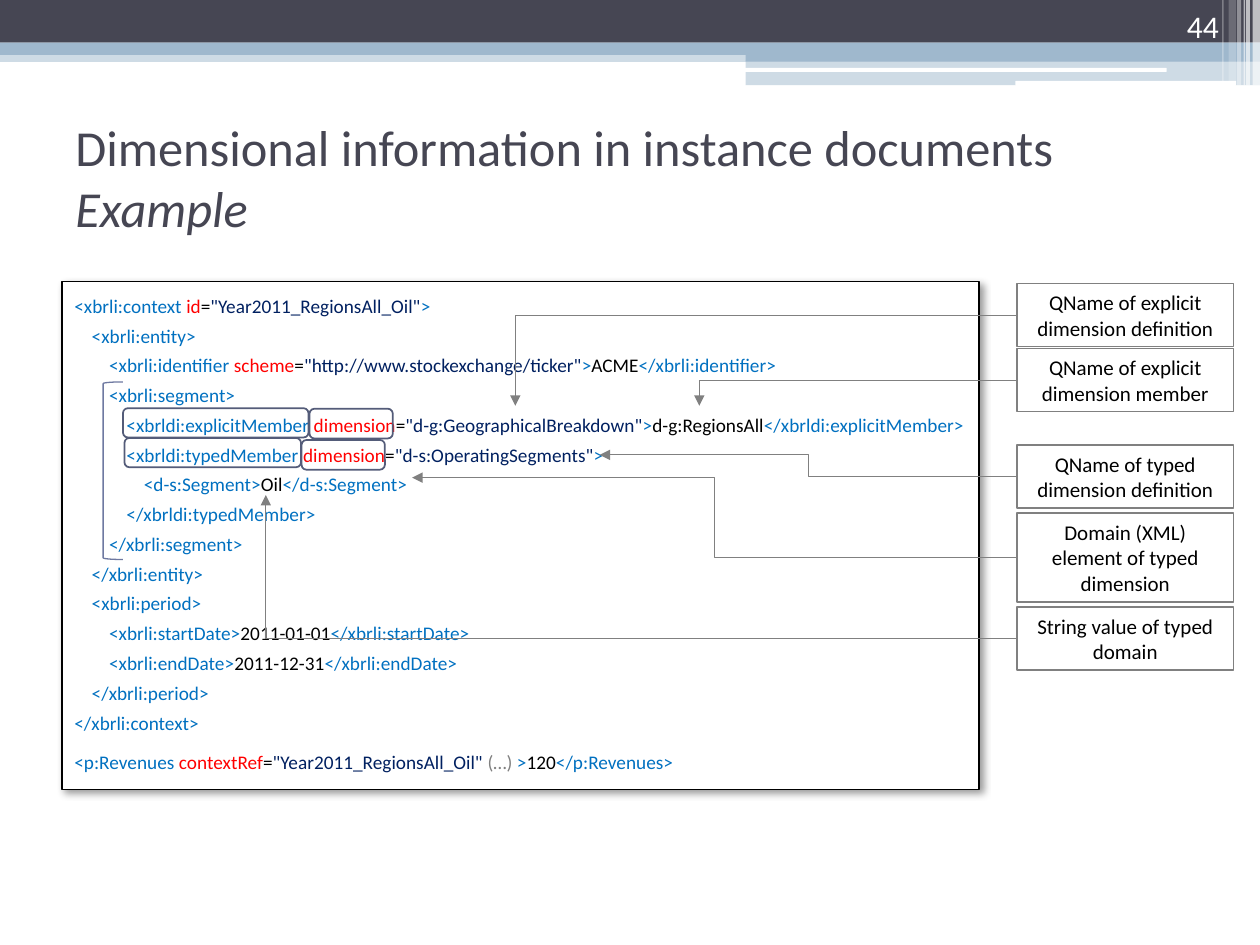
from lxml import etree
from pptx import Presentation
from pptx.dml.color import RGBColor
from pptx.enum.shapes import MSO_CONNECTOR, MSO_SHAPE
from pptx.enum.text import MSO_ANCHOR, PP_ALIGN
from pptx.oxml import parse_xml
from pptx.oxml.ns import qn
from pptx.util import Cm, Pt

RECT, ROUNDED = MSO_SHAPE.RECTANGLE, MSO_SHAPE.ROUNDED_RECTANGLE
BRACKET = MSO_SHAPE.LEFT_BRACKET
ELBOW = MSO_CONNECTOR.ELBOW
MIDDLE, TOP, BOTTOM = MSO_ANCHOR.MIDDLE, MSO_ANCHOR.TOP, MSO_ANCHOR.BOTTOM
LEFT, CENTER, RIGHT = PP_ALIGN.LEFT, PP_ALIGN.CENTER, PP_ALIGN.RIGHT
DARK, BLUE, WHITE, GREY = "464653", "9FB8CD", "FFFFFF", "808080"
TAG, ATTRIBUTE, VALUE, BLACK = "0070C0", "FF0000", "002060", "000000"
ATTRIBUTES = ("id", "scheme", "dimension", "contextRef")

deck = Presentation()
deck.slide_width, deck.slide_height = Cm(25.4), Cm(19.05)
page = deck.slides.add_slide(deck.slide_layouts[6])


def add_box(kind, place, fill=None, opacity=100, line=None, width=0.75):
    """Add a shape without shadow; place is left, top, width, height in cm."""
    box = page.shapes.add_shape(kind, *map(Cm, place))
    box.shadow.inherit = False
    if fill:
        box.fill.solid()
        box.fill.fore_color.rgb = RGBColor.from_string(fill)
        if opacity < 100:
            colour = box.fill._xPr.find(qn("a:solidFill"))[0]
            etree.SubElement(colour, qn("a:alpha")).set("val", str(opacity * 1000))
    else:
        box.fill.background()
    if line:
        box.line.color.rgb = RGBColor.from_string(line)
        box.line.width = Pt(width)
    else:
        box.line.fill.background()
    return box


def style_text(box, size, colour, align=LEFT, anchor=MIDDLE):
    frame = box.text_frame
    frame.word_wrap = True
    frame.vertical_anchor = anchor
    for para in frame.paragraphs:
        para.alignment = align
        for span in para.runs:
            span.font.name = "Calibri"
            span.font.size = Pt(size)
            span.font.color.rgb = RGBColor.from_string(colour)


# Header bands and the stripes at the right edge
for kind, place, fill, opacity in [
    (RECT, (0, 1.02, 25.4, 0.23), BLUE, 50),
    (RECT, (0, 0, 25.4, 0.86), DARK, 100),
    (RECT, (0, 0.86, 25.4, 0.25), BLUE, 100),
    (RECT, (15.03, 0.99, 10.37, 0.25), BLUE, 100),
    (RECT, (15.03, 1.22, 10.37, 0.5), BLUE, 50),
    (ROUNDED, (15.01, 1.37, 8.51, 0.08), WHITE, 100),
    (ROUNDED, (20.47, 1.63, 4.45, 0.1), WHITE, 100),
]:
    add_box(kind, place, fill, opacity)
for left, width, height, opacity in [
    (25.25, 0.15, 1.73, 65), (25.12, 0.08, 1.73, 65), (25.07, 0.03, 1.73, 60),
    (24.94, 0.08, 1.73, 40), (24.77, 0.15, 1.63, 20), (24.64, 0.03, 1.63, 30),
]:
    add_box(RECT, (left, 0, width, height), WHITE, opacity)

# Instance document: indent level, then pieces split by "|"
code_lines = [
    (0, '<xbrli:context |id|=|"Year2011_RegionsAll_Oil"|>'),
    (1, '<xbrli:entity>'),
    (2, '<xbrli:identifier |scheme|=|"http://www.stockexchange/ticker"|>|ACME|</xbrli:identifier>'),
    (2, '<xbrli:segment>'),
    (3, '<xbrldi:explicitMember |dimension|=|"d-g:GeographicalBreakdown"|>|d-g:RegionsAll|</xbrldi:explicitMember>'),
    (3, '<xbrldi:typedMember |dimension|=|"d-s:OperatingSegments"|>'),
    (4, '<d-s:Segment>|Oil|</d-s:Segment>'),
    (3, '</xbrldi:typedMember>'),
    (2, '</xbrli:segment>'),
    (1, '</xbrli:entity>'),
    (1, '<xbrli:period>'),
    (2, '<xbrli:startDate>|2011-01-01|</xbrli:startDate>'),
    (2, '<xbrli:endDate>|2011-12-31|</xbrli:endDate>'),
    (1, '</xbrli:period>'),
    (0, '</xbrli:context>'),
    (0, '<p:Revenues |contextRef|=|"Year2011_RegionsAll_Oil" |(…) |>|120|</p:Revenues>'),
]
code = add_box(RECT, (1.25, 5.67, 18.49, 10.25), WHITE, line=BLACK)
code.shadow.inherit = True
code._element.spPr.append(parse_xml(
    '<a:effectLst xmlns:a="http://schemas.openxmlformats.org/drawingml/2006/main">'
    '<a:outerShdw blurRad="50800" dist="38100" dir="2700000" algn="tl" rotWithShape="0">'
    '<a:srgbClr val="000000"><a:alpha val="40000"/></a:srgbClr>'
    '</a:outerShdw></a:effectLst>'))
for number, (level, line) in enumerate(code_lines):
    para = code.text_frame.paragraphs[0] if number == 0 else code.text_frame.add_paragraph()
    para.line_spacing = Pt(17)
    para._p.get_or_add_pPr().set("marL", str(Cm(0.35 * level)))
    for piece in line.split("|"):
        para.add_run().text = piece
para.line_spacing = 1.5
para.space_before = Pt(3)
style_text(code, 11, BLACK, anchor=TOP)
for para in code.text_frame.paragraphs:
    for span in para.runs:
        if span.text[0] in "<>":
            colour = TAG
        elif span.text in ATTRIBUTES:
            colour = ATTRIBUTE
        elif span.text[0] == '"':
            colour = VALUE
        else:
            colour = GREY if span.text[0] == "(" else BLACK
        span.font.color.rgb = RGBColor.from_string(colour)

# Page number and title
number_box = page.shapes.add_textbox(Cm(22.71), Cm(0), Cm(2.11), Cm(1.02))
number_box.text_frame.text = "44"
style_text(number_box, 18, WHITE, RIGHT, BOTTOM)

title = page.shapes.add_textbox(Cm(1.27), Cm(2.18), Cm(22.86), Cm(2.77))
title.text_frame.text = "Dimensional information in instance documents\vExample"
style_text(title, 28.8, DARK)
title.text_frame.paragraphs[0].runs[1].font.italic = True

# Callouts, each with an arrow to its place in the code
callout_left = 20.5
for text, top, height, target, bend in [
    ("QName of explicit dimension definition", 5.72, 1.27, (10.39, 8.18), "bentConnector2"),
    ("QName of explicit dimension member", 7.03, 1.27, (14.1, 8.18), "bentConnector2"),
    ("QName of typed dimension definition", 8.97, 1.27, (12.09, 9.17), "bentConnector3"),
    ("Domain (XML) element of typed dimension", 10.34, 1.8, (8.31, 9.63), "bentConnector3"),
    ("String value of typed domain", 12.24, 1.27, (5.36, 9.98), "bentConnector2"),
]:
    callout = add_box(RECT, (callout_left, top, 4.37, height), line=GREY)
    callout.text_frame.text = text
    style_text(callout, 12, BLACK, CENTER)

    arrow = page.shapes.add_connector(
        ELBOW, Cm(callout_left), Cm(top + height / 2), Cm(target[0]), Cm(target[1]))
    arrow.line.color.rgb = RGBColor.from_string(GREY)
    arrow.line.width = Pt(0.75)
    properties = arrow._element.spPr
    properties.find(qn("a:prstGeom")).set("prst", bend)
    etree.SubElement(properties.find(qn("a:ln")), qn("a:tailEnd")).set("type", "triangle")
    etree.SubElement(properties, qn("a:effectLst"))

# Frames around element and attribute names, bracket around the segment
for place in [
    (2.48, 8.23, 3.74, 0.59), (2.51, 8.83, 3.56, 0.59),
    (6.08, 8.87, 1.68, 0.6), (6.24, 8.24, 1.68, 0.6),
]:
    add_box(ROUNDED, place, line="545C79", width=1)
add_box(BRACKET, (2.08, 7.7, 0.4, 3.58), line="6E79A1")

deck.save("out.pptx")
